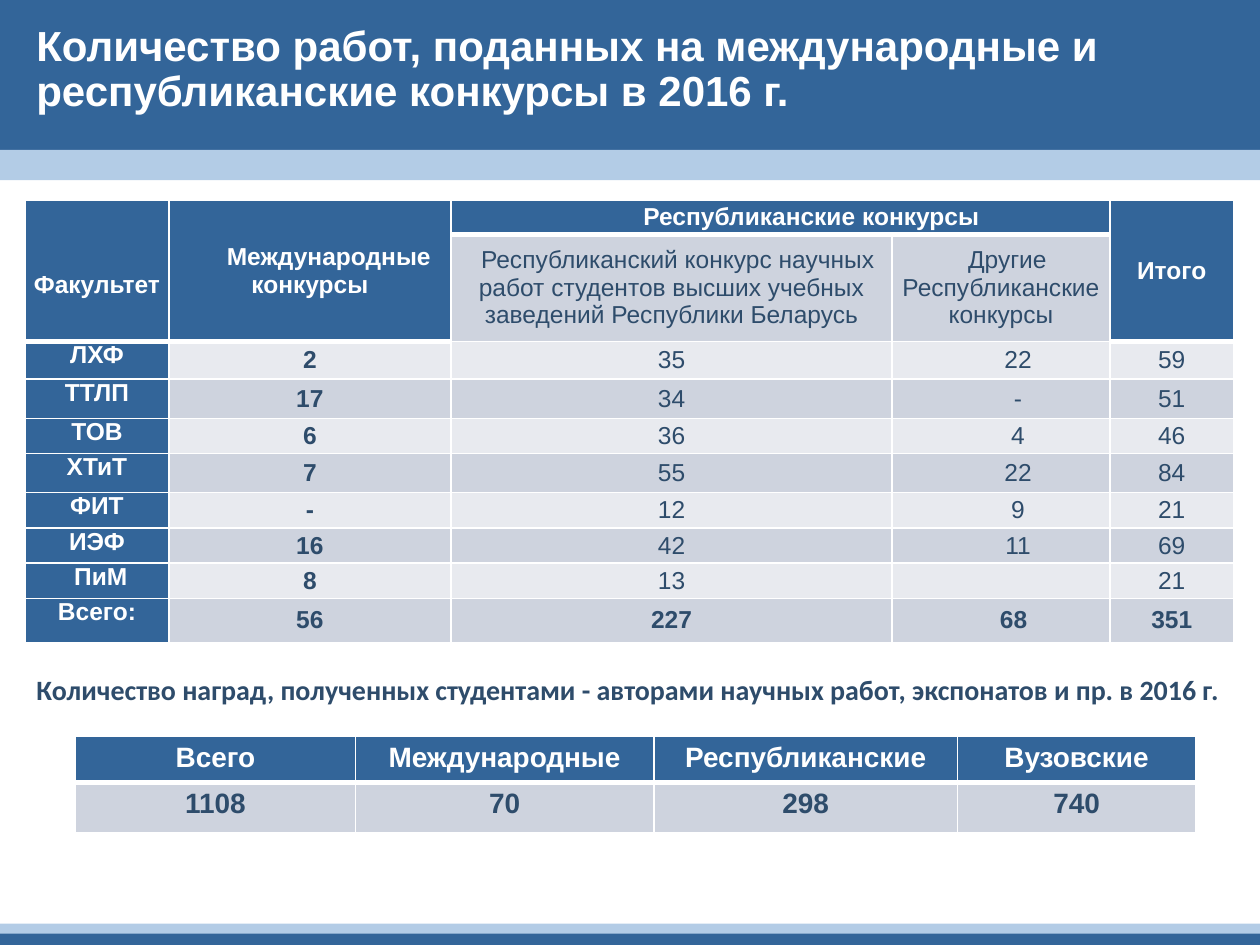
"""Build a slide of student contest entries and awards for 2016."""
from lxml import etree
from pptx import Presentation
from pptx import util as u
from pptx.dml.color import RGBColor
from pptx.enum import shapes, text
from pptx.oxml import ns

HUES = {"blue": "336599", "sky": "B3CCE6", "ink": "2E4C6B",
        "white": "FFFFFF", "dark": "CED3DE", "light": "E8EAEF"}
MID, TOP = text.MSO_ANCHOR.MIDDLE, text.MSO_ANCHOR.TOP


def write(frame, words, size, hue, bold=True, face="Arial", align=text.PP_ALIGN.CENTER):
    frame.text = words
    para = frame.paragraphs[0]
    para.alignment = align
    for run in para.runs:
        font = run.font
        font.size, font.name, font.bold = u.Pt(size), face, bold
        font.color.rgb = RGBColor.from_string(HUES[hue])
    if not words:
        etree.SubElement(para._p, ns.qn("a:endParaRPr"), sz=str(size * 100))
    return para


def style(cell, fill, row, head, pad, anchor):
    cell.margin_left = cell.margin_right = u.Inches(pad[0])
    cell.margin_top = cell.margin_bottom = u.Inches(pad[1])
    cell.vertical_anchor = anchor
    props = cell._tc.get_or_add_tcPr()
    for side in "LRTB":
        if side == "T" and row:
            continue
        width = 3 if head and side == "B" else 1
        line = etree.SubElement(props, ns.qn("a:ln" + side), w=str(u.Pt(width)))
        solid = etree.SubElement(line, ns.qn("a:solidFill"))
        etree.SubElement(solid, ns.qn("a:srgbClr"), val=HUES["white"])
    cell.fill.solid()
    cell.fill.fore_color.rgb = RGBColor.from_string(HUES[fill])


deck = Presentation()
deck.slide_width, deck.slide_height = u.Inches(10), u.Inches(7.5)
slide = deck.slides.add_slide(deck.slide_layouts[6])

bars = [(0, 1.31, "blue"), (7.37, 0.13, "blue"), (1.19, 0.24, "sky"), (7.33, 0.08, "sky")]
for top, high, hue in bars:
    bar = slide.shapes.add_shape(shapes.MSO_SHAPE.RECTANGLE, 0, u.Inches(top),
                                 u.Inches(10), u.Inches(high))
    bar.shadow.inherit = False
    bar.fill.solid()
    bar.fill.fore_color.rgb = RGBColor.from_string(HUES[hue])
    bar.line.fill.background()

labels = [
    ((0.19, 0.56, 10.21, 0.41), 24, "white", "Arial", text.PP_ALIGN.LEFT,
     "Количество работ, поданных на международные и республиканские конкурсы в 2016 г."),
    ((0.12, 5.25, 9.73, 0.41), 16, "ink", "Calibri", text.PP_ALIGN.CENTER,
     "Количество наград, полученных студентами - авторами научных работ, экспонатов и пр. в 2016 г."),
]
for place, size, hue, face, align, words in labels:
    frame = slide.shapes.add_textbox(*map(u.Inches, place)).text_frame
    frame.word_wrap = True
    frame.vertical_anchor = text.MSO_ANCHOR.BOTTOM
    write(frame, words, size, hue, face=face, align=align).line_spacing = 0.9

works = [
    ["Факультет", "Международные конкурсы", "Республиканские конкурсы", "", "Итого"],
    ["", "", "Республиканский конкурс научных работ студентов высших учебных "
     "заведений Республики Беларусь", "Другие Республиканские конкурсы", ""],
    ["ЛХФ", "2", "35", "22", "59"],
    ["ТТЛП", "17", "34", "-", "51"],
    ["ТОВ", "6", "36", "4", "46"],
    ["ХТиТ", "7", "55", "22", "84"],
    ["ФИТ", "-", "12", "9", "21"],
    ["ИЭФ", "16", "42", "11", "69"],
    ["ПиМ", "8", "13", "", "21"],
    ["Всего:", "56", "227", "68", "351"],
]
wides = [1.14, 2.24, 3.5, 1.73, 0.98]
highs = [0.27, 0.85, 0.3, 0.31, 0.28, 0.31, 0.28, 0.28, 0.28, 0.35]
dents = {(0, 1): 0.3, (0, 2): 0.49, (1, 2): 0.1, (1, 3): 0.1, (8, 0): 0.06, (9, 3): 0.2}
grid = slide.shapes.add_table(10, 5, u.Inches(0.2), u.Inches(1.59),
                              u.Inches(sum(wides)), u.Inches(sum(highs))).table
for col, wide in enumerate(wides):
    grid.columns[col].width = u.Inches(wide)
for row, high in enumerate(highs):
    grid.rows[row].height = u.Inches(high)
    for col, words in enumerate(works[row]):
        cell = grid.cell(row, col)
        head = row == 0 or (row == 1 and col in (0, 1, 4))
        blue = head or col == 0
        fill = "blue" if blue else "dark" if row % 2 else "light"
        style(cell, fill, row, head, (0.07, 0), TOP if col == 0 and row > 1 else MID)
        bold = blue or row == 9 or (row > 1 and col == 1)
        para = write(cell.text_frame, words, 14, "white" if blue else "ink", bold)
        dent = dents.get((row, col), 0.27 if row > 1 and col == 3 else 0)
        para._p.get_or_add_pPr().set("indent", str(u.Inches(dent)))
for first, last in [((0, 0), (1, 0)), ((0, 1), (1, 1)), ((0, 2), (0, 3)), ((0, 4), (1, 4))]:
    grid.cell(*first).merge(grid.cell(*last))
corner = grid.cell(0, 0)
corner.margin_left = corner.margin_right = u.Inches(0.04)
corner.margin_top = u.Inches(0.22)

awards = [["Всего", "Международные", "Республиканские", "Вузовские"],
          ["1108", "70", "298", "740"]]
wides, highs = [2.22, 2.37, 2.41, 1.89], [0.37, 0.4]
grid = slide.shapes.add_table(2, 4, u.Inches(0.6), u.Inches(5.84),
                              u.Inches(sum(wides)), u.Inches(sum(highs))).table
for col, wide in enumerate(wides):
    grid.columns[col].width = u.Inches(wide)
for row, high in enumerate(highs):
    grid.rows[row].height = u.Inches(high)
    for col, words in enumerate(awards[row]):
        cell = grid.cell(row, col)
        style(cell, "dark" if row else "blue", row, row == 0, (0.1, 0.05), TOP)
        write(cell.text_frame, words, 16, "ink" if row else "white")

deck.save("out.pptx")
